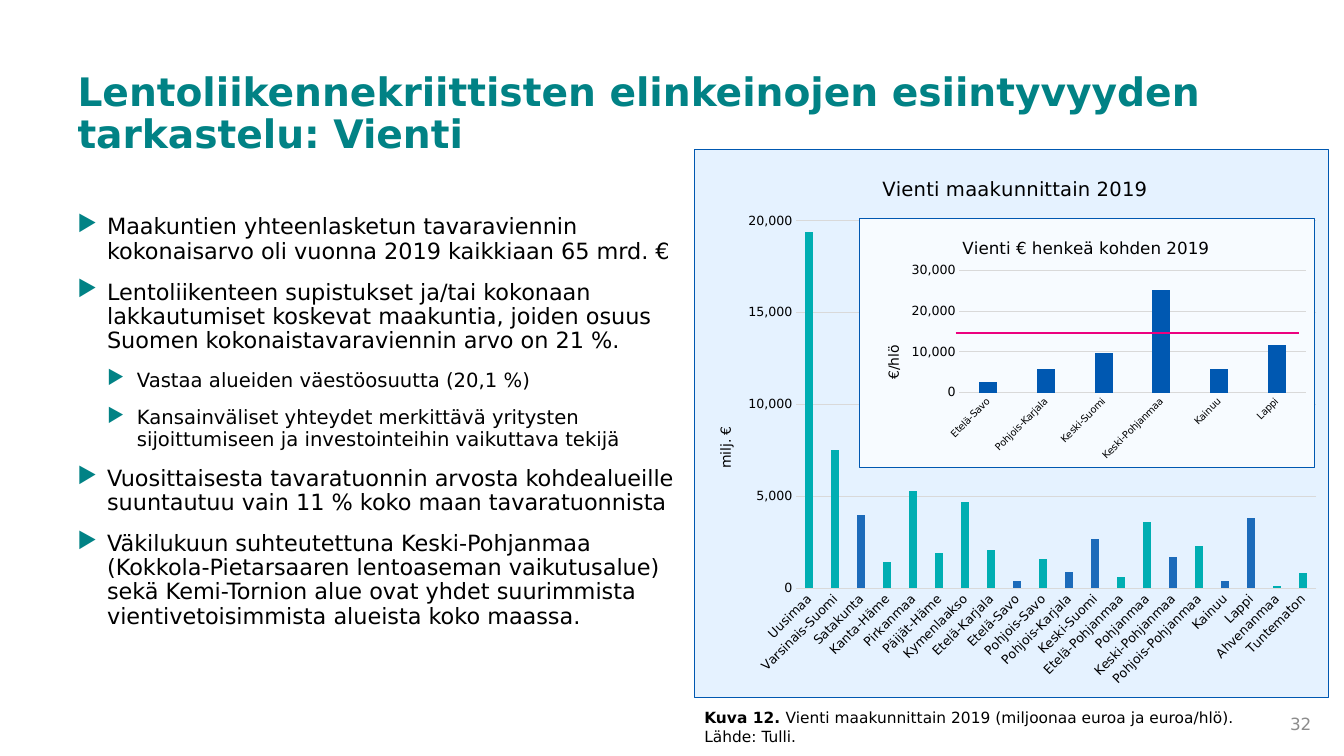
"""Build the slide on regional exports with two column charts."""
from lxml.etree import SubElement
from pptx import Presentation
from pptx.chart.data import CategoryChartData
from pptx.dml.color import RGBColor
from pptx.enum.chart import XL_CHART_TYPE as ChartType, XL_TICK_MARK as TickMark
from pptx.enum.shapes import MSO_CONNECTOR as Connector
from pptx.enum.text import MSO_ANCHOR as Anchor, MSO_AUTO_SIZE as AutoSize, PP_ALIGN as Align
from pptx.oxml import parse_xml
from pptx.oxml.ns import nsdecls, qn
from pptx.util import Cm, Pt

FONT = "DejaVu Sans"
COLORS = {
    "heading": "018285", "text": "000000", "number": "8C8C8C", "grid": "D9D9D9",
    "border": "0058B1", "panel": "E5F2FF", "inset": "F7FBFF", "teal": "00AEB2",
    "highlight": "1C6BBA", "average": "EC017F",
}


def set_font(font, size, color="text", bold=False):
    values = {"name": FONT, "size": Pt(size), "bold": bold}
    for name, value in values.items():
        setattr(font, name, value)
    font.color.rgb = RGBColor.from_string(COLORS[color])


def set_layout(element, **values):
    layout = element.find(qn("c:layout"))
    if layout is None:
        layout = parse_xml(f"<c:layout {nsdecls('c')}/>")
        element.insert(0, layout)
    manual = SubElement(layout, qn("c:manualLayout"))
    for tag, value in values.items():
        SubElement(manual, qn(f"c:{tag}")).set("val", str(value))


presentation = Presentation()
presentation.slide_width, presentation.slide_height = Cm(33.87), Cm(19.05)
slide = presentation.slides.add_slide(presentation.slide_layouts[5])

title = slide.shapes.title
title_place = {"left": 1.7, "top": 1.7, "width": 29.85, "height": 3.07}
for name, length in title_place.items():
    setattr(title, name, Cm(length))
title_format = {"word_wrap": True, "auto_size": AutoSize.NONE, "vertical_anchor": Anchor.TOP}
for name, value in title_format.items():
    setattr(title.text_frame, name, value)
paragraph = title.text_frame.paragraphs[0]
paragraph.alignment, paragraph.line_spacing = Align.LEFT, 0.9
run = paragraph.add_run()
run.text = "Lentoliikennekriittisten elinkeinojen esiintyvyyden tarkastelu: Vienti"
set_font(run.font, 28, "heading", True)

bullets = [
    (0, "Maakuntien yhteenlasketun tavaraviennin kokonaisarvo oli vuonna 2019 kaikkiaan 65 mrd. €"),
    (0, "Lentoliikenteen supistukset ja/tai kokonaan lakkautumiset koskevat maakuntia, "
        "joiden osuus Suomen kokonaistavaraviennin arvo on 21 %."),
    (1, "Vastaa alueiden väestöosuutta (20,1 %)"),
    (1, "Kansainväliset yhteydet merkittävä yritysten sijoittumiseen ja investointeihin "
        "vaikuttava tekijä"),
    (0, "Vuosittaisesta tavaratuonnin arvosta kohdealueille suuntautuu vain 11 % koko maan "
        "tavaratuonnista"),
    (0, "Väkilukuun suhteutettuna Keski-Pohjanmaa (Kokkola-Pietarsaaren lentoaseman "
        "vaikutusalue) sekä Kemi-Tornion alue ovat yhdet suurimmista vientivetoisimmista "
        "alueista koko maassa."),
]
body = slide.shapes.add_textbox(Cm(1.7), Cm(5.31), Cm(15.77), Cm(11.86)).text_frame
body.word_wrap = True
for index, (level, text) in enumerate(bullets):
    paragraph = body.add_paragraph() if index else body.paragraphs[0]
    paragraph.level, paragraph.line_spacing = level, 0.9
    paragraph.space_before = Pt(12 if index else 0)
    properties = paragraph._p.get_or_add_pPr()
    properties.set("marL", str(Cm(0.75 * (level + 1))))
    properties.set("indent", str(Cm(-0.75)))
    bullet_color = SubElement(properties, qn("a:buClr"))
    SubElement(bullet_color, qn("a:srgbClr")).set("val", COLORS["heading"])
    SubElement(properties, qn("a:buChar")).set("char", "▶")
    run = paragraph.add_run()
    run.text = text
    set_font(run.font, 16 - 2 * level)

regions = {
    "Uusimaa": 19400, "Varsinais-Suomi": 7500, "Satakunta": 4000, "Kanta-Häme": 1400,
    "Pirkanmaa": 5300, "Päijät-Häme": 1900, "Kymenlaakso": 4700, "Etelä-Karjala": 2100,
    "Etelä-Savo": 400, "Pohjois-Savo": 1600, "Pohjois-Karjala": 900, "Keski-Suomi": 2700,
    "Etelä-Pohjanmaa": 600, "Pohjanmaa": 3600, "Keski-Pohjanmaa": 1700,
    "Pohjois-Pohjanmaa": 2300, "Kainuu": 400, "Lappi": 3800, "Ahvenanmaa": 100,
    "Tuntematon": 800,
}
per_person = {
    "Etelä-Savo": 2500, "Pohjois-Karjala": 5700, "Keski-Suomi": 9700,
    "Keski-Pohjanmaa": 25300, "Kainuu": 5800, "Lappi": 11800,
}
charts = [
    {"place": (17.5, 3.76, 16, 13.84), "values": regions, "fill": "panel", "bar": "teal",
     "title": "Vienti maakunnittain 2019", "title_size": 14, "title_at": (0.29, 0.04),
     "unit": "milj. €", "unit_at": (0.03, 0.5), "label_size": 9, "max": 20000, "step": 5000,
     "plot": (0.16, 0.13, 0.82, 0.67),
     "highlights": ["Satakunta", "Etelä-Savo", "Pohjois-Karjala", "Keski-Suomi",
                    "Keski-Pohjanmaa", "Kainuu", "Lappi"]},
    {"place": (21.64, 5.49, 11.51, 6.3), "values": per_person, "fill": "inset", "bar": "border",
     "title": "Vienti € henkeä kohden 2019", "title_size": 12, "title_at": (0.22, 0.06),
     "unit": "€/hlö", "unit_at": (0.05, 0.5), "label_size": 7, "max": 30000, "step": 10000,
     "plot": (0.22, 0.21, 0.76, 0.49), "highlights": []},
]
for design in charts:
    data = CategoryChartData()
    data.categories = list(design["values"])
    data.add_series("Vienti", list(design["values"].values()))
    place = [Cm(length) for length in design["place"]]
    chart = slide.shapes.add_chart(ChartType.COLUMN_CLUSTERED, *place, data).chart
    set_font(chart.font, 10)
    chart.has_legend = False
    chart._chartSpace.find(qn("c:chart")).addnext(parse_xml(
        f"<c:spPr {nsdecls('c', 'a')}>"
        f"<a:solidFill><a:srgbClr val='{COLORS[design['fill']]}'/></a:solidFill>"
        f"<a:ln w='{Pt(0.75)}'><a:solidFill><a:srgbClr val='{COLORS['border']}'/></a:solidFill></a:ln>"
        "</c:spPr>"))

    category_axis, value_axis = chart.category_axis, chart.value_axis
    chart.has_title = value_axis.has_title = True
    headings = [(chart.chart_title, "title", design["title_size"]),
                (value_axis.axis_title, "unit", 10)]
    for heading, key, size in headings:
        run = heading.text_frame.paragraphs[0].add_run()
        run.text = design[key]
        set_font(run.font, size)
        x, y = design[f"{key}_at"]
        set_layout(heading._element, xMode="edge", yMode="edge", x=x, y=y)
    x, y, w, h = design["plot"]
    set_layout(chart._chartSpace.chart.plotArea, layoutTarget="inner",
               xMode="edge", yMode="edge", x=x, y=y, w=w, h=h)

    scale = {"minimum_scale": 0, "maximum_scale": design["max"], "major_unit": design["step"],
             "has_major_gridlines": True}
    for name, value in scale.items():
        setattr(value_axis, name, value)
    for axis, size in ((category_axis, design["label_size"]), (value_axis, 9)):
        axis.major_tick_mark = axis.minor_tick_mark = TickMark.NONE
        set_font(axis.tick_labels.font, size)
    value_axis.tick_labels.number_format = "#,##0"
    value_axis.tick_labels.number_format_is_linked = False
    value_axis.format.line.fill.background()
    for line in (category_axis.format.line, value_axis.major_gridlines.format.line):
        line.width = Pt(0.75)
        line.color.rgb = RGBColor.from_string(COLORS["grid"])
    label_body = category_axis._element.find(qn("c:txPr")).find(qn("a:bodyPr"))
    label_body.set("rot", "-2700000")
    label_body.set("vert", "horz")

    plot = chart.plots[0]
    plot.gap_width, plot.overlap, plot.vary_by_categories = 219, -27, False
    series = plot.series[0]
    series.invert_if_negative = False
    series.format.fill.solid()
    series.format.fill.fore_color.rgb = RGBColor.from_string(COLORS[design["bar"]])
    for region in design["highlights"]:
        fill = series.points[list(design["values"]).index(region)].format.fill
        fill.solid()
        fill.fore_color.rgb = RGBColor.from_string(COLORS["highlight"])

average = slide.shapes.add_connector(Connector.STRAIGHT, Cm(24.08), Cm(8.38), Cm(32.74), Cm(8.38))
average.line.width = Pt(1.5)
average.line.color.rgb = RGBColor.from_string(COLORS["average"])
SubElement(average._element.spPr, qn("a:effectLst"))

notes = [
    ((17.5, 17.73, 14.5, 1.19), Align.LEFT, Anchor.TOP, [
        ("Kuva 12. ", 11, "text", True),
        ("Vienti maakunnittain 2019 (miljoonaa euroa ja euroa/hlö). Lähde: Tulli.",
         11, "text", False)]),
    ((31.39, 17.88, 1.91, 0.71), Align.RIGHT, Anchor.MIDDLE, [("32", 12, "number", False)]),
]
for place, alignment, anchor, runs in notes:
    frame = slide.shapes.add_textbox(*[Cm(length) for length in place]).text_frame
    frame.word_wrap, frame.vertical_anchor = True, anchor
    frame.paragraphs[0].alignment = alignment
    for text, size, color, bold in runs:
        run = frame.paragraphs[0].add_run()
        run.text = text
        set_font(run.font, size, color, bold)

presentation.save("out.pptx")
